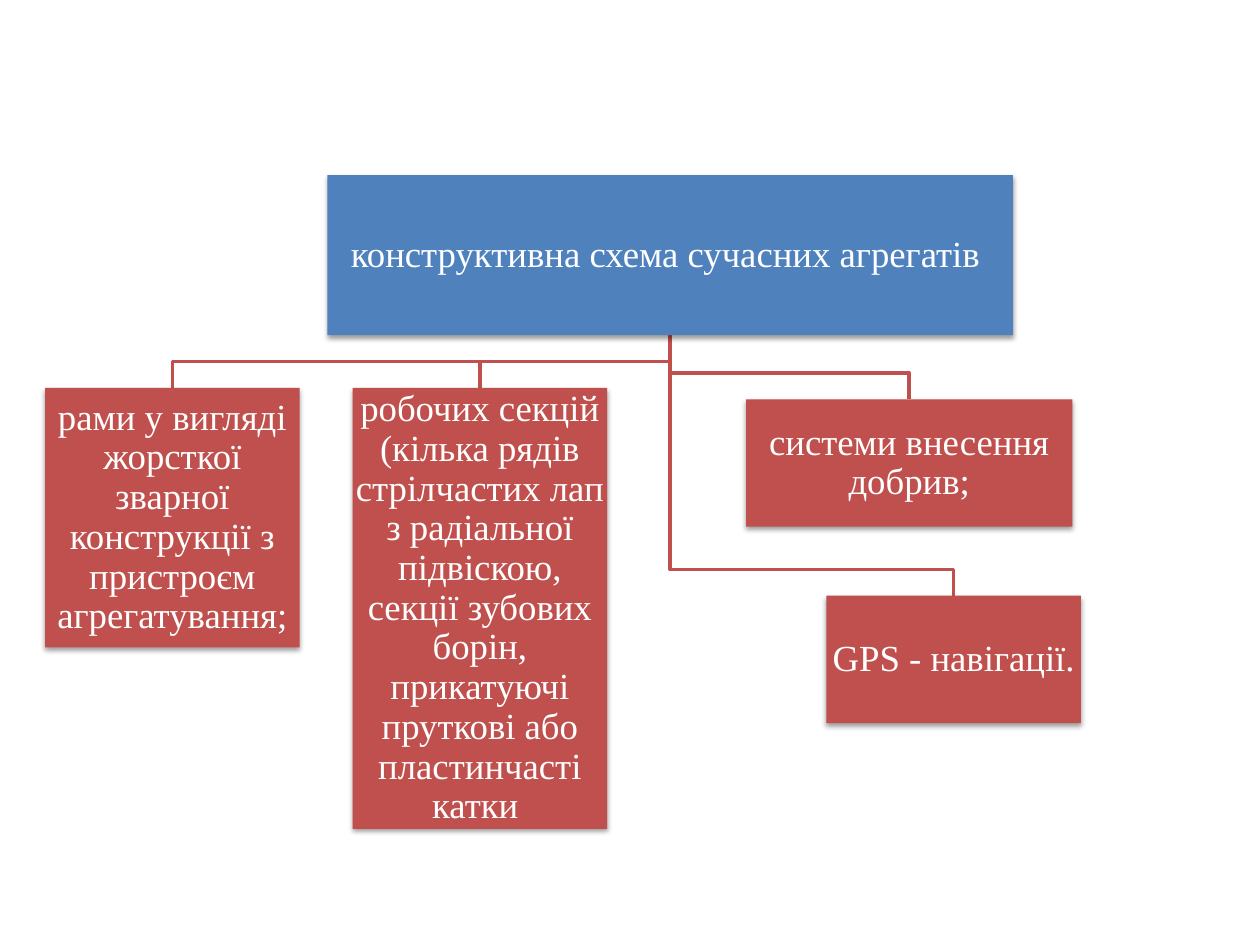
import pptx
import pptx.dml.color
import pptx.enum.shapes
import pptx.enum.text
import pptx.oxml
import pptx.oxml.ns
import pptx.util
from pptx.util import Cm

BLUE = pptx.dml.color.RGBColor(0x4F, 0x81, 0xBD)
RED = pptx.dml.color.RGBColor(0xC0, 0x50, 0x4D)
WHITE = pptx.dml.color.RGBColor(0xFF, 0xFF, 0xFF)

SHADOW = (
    f'<a:effectLst {pptx.oxml.ns.nsdecls("a")}>'
    '<a:outerShdw blurRad="39370" dist="20320" dir="5400000" rotWithShape="0">'
    '<a:srgbClr val="000000"><a:alpha val="38000"/></a:srgbClr>'
    '</a:outerShdw></a:effectLst>'
)

BEND_GAP = 0.53  # height of the last vertical run above each part, cm

# Boxes are left, top, width, height in cm, relative to the diagram's corner.
ROOT = ("конструктивна схема сучасних агрегатів ", (5.69, 0, 13.82, 3.23))
PARTS = [
    ("рами у вигляді жорсткої зварної конструкції з пристроєм агрегатування;",
     (0, 4.29, 5.13, 5.23)),
    ("робочих секцій (кілька рядів стрілчастих лап з радіальної підвіскою, "
     "секції зубових борін, прикатуючі пруткові або пластинчасті катки ",
     (6.2, 4.29, 5.13, 8.89)),
    ("системи внесення добрив;", (14.13, 4.52, 6.58, 2.57)),
    ("GPS - навігації.", (15.75, 8.48, 5.13, 2.57)),
]


def write_text(frame, text, *, size=21, font="Times New Roman", color=WHITE,
               align=pptx.enum.text.PP_ALIGN.CENTER, line_spacing=0.9):
    frame.word_wrap = True
    frame.vertical_anchor = pptx.enum.text.MSO_ANCHOR.MIDDLE
    frame.margin_left = frame.margin_right = Cm(0.03)
    frame.margin_top = frame.margin_bottom = Cm(0.03)
    paragraph = frame.paragraphs[0]
    paragraph.alignment = align
    paragraph.line_spacing = line_spacing
    run = paragraph.add_run()
    run.text = text
    run.font.size = pptx.util.Pt(size)
    run.font.name = font
    run.font.color.rgb = color


def add_node(slide, text, box, fill):
    node = slide.shapes.add_shape(
        pptx.enum.shapes.MSO_SHAPE.RECTANGLE, *map(Cm, box))
    node.fill.solid()
    node.fill.fore_color.rgb = fill
    node.line.fill.background()
    node._element.spPr.append(pptx.oxml.parse_xml(SHADOW))
    write_text(node.text_frame, text)


def add_branch(slide, parent, child):
    """Draw the elbow from the parent's bottom to the child's top."""
    start_x, start_y = parent[0] + parent[2] / 2, parent[1] + parent[3]
    end_x, end_y = child[0] + child[2] / 2, child[1]
    bend_y = end_y - BEND_GAP
    builder = slide.shapes.build_freeform(Cm(start_x), Cm(start_y))
    corners = [(start_x, bend_y), (end_x, bend_y), (end_x, end_y)]
    builder.add_line_segments([(Cm(x), Cm(y)) for x, y in corners], close=False)
    branch = builder.convert_to_shape()
    branch.fill.background()
    branch.line.color.rgb = RED
    branch.line.width = pptx.util.Pt(2)
    branch.shadow.inherit = False


def add_hierarchy(slide, left, top):
    def place(box):
        return left + box[0], top + box[1], box[2], box[3]

    root_text, root_box = ROOT
    for _, part_box in reversed(PARTS):
        add_branch(slide, place(root_box), place(part_box))
    add_node(slide, root_text, place(root_box), BLUE)
    for part_text, part_box in PARTS:
        add_node(slide, part_text, place(part_box), RED)


def main():
    deck = pptx.Presentation()
    deck.slide_width, deck.slide_height = Cm(25.4), Cm(19.05)
    slide = deck.slides.add_slide(deck.slide_layouts[6])
    add_hierarchy(slide, left=0.91, top=3.53)
    deck.save("out.pptx")


if __name__ == "__main__":
    main()
